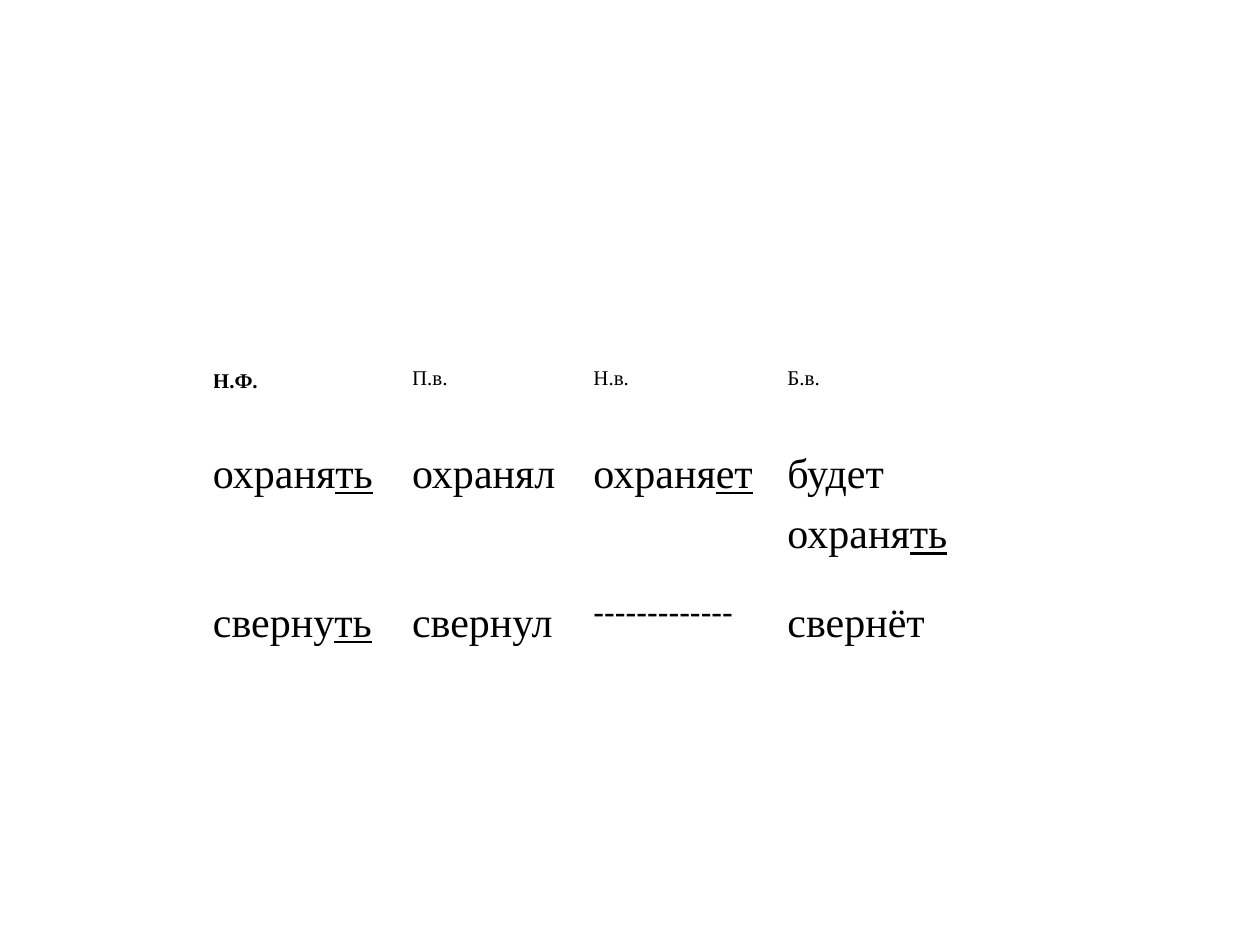
from pptx import Presentation
from pptx.dml.color import RGBColor
from pptx.util import Inches, Pt

BLACK = RGBColor(0, 0, 0)
SERIF = "Times New Roman"
SANS = "Calibri"
BLANK_LAYOUT = 6
DASHES = "-------------"

VERB_FORMS = [
    [("Н.Ф.", ""), ("П.в.", ""), ("Н.в.", ""), ("Б.в.", "")],
    [("охраня", "ть"), ("охранял", ""), ("охраня", "ет"), ("будет охраня", "ть")],
    [("сверну", "ть"), ("свернул", ""), (DASHES, ""), ("свернёт", "")],
]
COLUMN_WIDTHS = [1.58, 1.44, 1.54, 1.59]
ROW_HEIGHTS = [0.59, 1.18, 0.59]
TABLE_LEFT, TABLE_TOP = 1.69, 2.88


def text_style(row, column, stem):
    if row == 0:
        return SERIF, 12, 1.3 if column == 0 else 1.15, 0
    if stem == DASHES:
        return SANS, 20, 1.15, 0
    return SERIF, 24, 1.3, 10


def fill_cell(cell, row, column, stem, ending):
    cell.fill.background()
    cell.margin_left = cell.margin_right = cell.margin_top = cell.margin_bottom = 0
    font_name, size, line_spacing, space_after = text_style(row, column, stem)
    paragraph = cell.text_frame.paragraphs[0]
    paragraph.line_spacing = line_spacing
    paragraph.space_after = Pt(space_after)
    for text, underlined in ((stem, False), (ending, True)):
        if text:
            run = paragraph.add_run()
            run.text = text
            run.font.name = font_name
            run.font.size = Pt(size)
            run.font.bold = row == 0 and column == 0
            run.font.underline = underlined
            run.font.color.rgb = BLACK


def main():
    presentation = Presentation()
    presentation.slide_width = Inches(10)
    presentation.slide_height = Inches(7.5)
    slide = presentation.slides.add_slide(presentation.slide_layouts[BLANK_LAYOUT])
    table = slide.shapes.add_table(
        len(ROW_HEIGHTS), len(COLUMN_WIDTHS), Inches(TABLE_LEFT), Inches(TABLE_TOP),
        Inches(sum(COLUMN_WIDTHS)), Inches(sum(ROW_HEIGHTS)),
    ).table
    table.first_row = False
    table.horz_banding = False
    for column, width in zip(table.columns, COLUMN_WIDTHS):
        column.width = Inches(width)
    for row, height in zip(table.rows, ROW_HEIGHTS):
        row.height = Inches(height)
    for row, forms in enumerate(VERB_FORMS):
        for column, (stem, ending) in enumerate(forms):
            fill_cell(table.cell(row, column), row, column, stem, ending)
    presentation.save("out.pptx")


if __name__ == "__main__":
    main()
